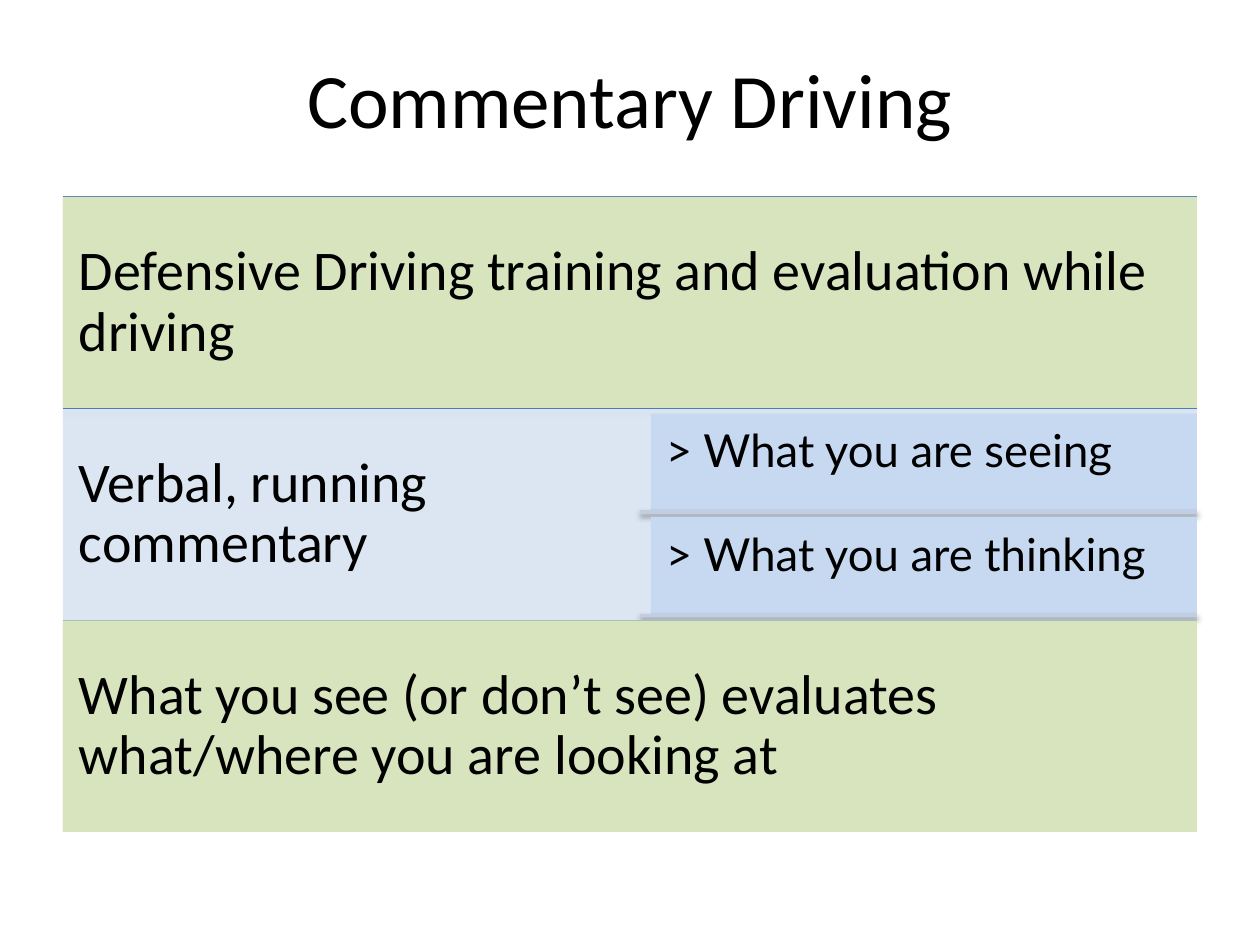
from lxml.etree import SubElement
from pptx import Presentation
from pptx.dml.color import RGBColor
from pptx.enum.shapes import MSO_CONNECTOR, MSO_SHAPE
from pptx.enum.text import MSO_ANCHOR, PP_ALIGN
from pptx.oxml.ns import qn
from pptx.util import Pt

PX = 914400 / 126
COLORS = {"panel": "DCE6F2", "green": "D7E4BD", "blue": "C6D9F1",
          "rule": "4B7EBC", "subrule": "C2CDE1", "text": "000000"}
ROWS = [
    ("Defensive Driving training and evaluation while driving", "green"),
    ("Verbal, running commentary", None),
    ("What you see (or don’t see) evaluates what/where you are looking at", "green"),
]
POINTS = ["> What you are seeing", "> What you are thinking"]


def emu(*lengths):
    return [round(n * PX) for n in lengths]


def color(name):
    return RGBColor.from_string(COLORS[name])


def style_text(p, font, size):
    f = p.runs[0].font
    f.name, f.size = font, Pt(size)
    f.color.rgb = color("text")


def add_block(s, box, fill, text="", font="Calibri", size=32,
              anchor=MSO_ANCHOR.MIDDLE, inset=16):
    sp = s.shapes.add_shape(MSO_SHAPE.RECTANGLE, *emu(*box))
    sp.shadow.inherit = False
    sp.line.fill.background()
    if fill:
        sp.fill.solid()
        sp.fill.fore_color.rgb = color(fill)
    else:
        sp.fill.background()
    if text:
        tf = sp.text_frame
        tf.word_wrap = True
        tf.vertical_anchor = anchor
        tf.margin_left, tf.margin_top, tf.margin_right, tf.margin_bottom = emu(*[inset] * 4)
        p = tf.paragraphs[0]
        p.text = text
        p.alignment = PP_ALIGN.LEFT
        p.line_spacing = 0.9
        style_text(p, font, size)


def add_rule(s, x1, x2, y, line, width, alpha):
    c = s.shapes.add_connector(MSO_CONNECTOR.STRAIGHT, *emu(x1, y, x2, y))
    c.line.color.rgb = color(line)
    c.line.width = Pt(width)
    # Soft shadow straight below the rule
    effects = SubElement(c._element.spPr, qn("a:effectLst"))
    shadow = SubElement(effects, qn("a:outerShdw"), blurRad=str(Pt(3.1)),
                        dist=str(Pt(1.7)), dir="5400000", rotWithShape="0")
    black = SubElement(shadow, qn("a:srgbClr"), val="000000")
    SubElement(black, qn("a:alpha"), val=str(alpha * 1000))


def add_title(s, box, text):
    sp = s.shapes.title
    sp.left, sp.top, sp.width, sp.height = emu(*box)
    tf = sp.text_frame
    tf.text = text
    tf.vertical_anchor = MSO_ANCHOR.MIDDLE
    tf.paragraphs[0].alignment = PP_ALIGN.CENTER
    style_text(tf.paragraphs[0], "Calibri", 44)


def add_points(s, box):
    x, y, w, h = box
    indent, gap = 11, 5
    point_h = (h - gap * (len(POINTS) + 1)) / len(POINTS)
    for i, text in enumerate(POINTS):
        top = y + gap + i * (point_h + gap)
        add_block(s, (x + indent, top, w - indent, point_h), "blue", text,
                  "Lato", 26, MSO_ANCHOR.TOP, 15)
        add_rule(s, x, x + w, top + point_h, "subrule", 2, 38)


def add_panel(s, box):
    x, y, w, h = box
    add_block(s, box, "panel")
    row_h = h / len(ROWS)
    split = 577
    for i, (text, fill) in enumerate(ROWS):
        top = y + i * row_h
        add_rule(s, x, x + w, top, "rule", 0.75, 35)
        add_block(s, (x, top, w if fill else split, row_h), fill, text)
        if not fill:
            add_points(s, (x + split, top, w - split, row_h))


def main():
    prs = Presentation()
    prs.slide_width, prs.slide_height = emu(1260, 945)
    s = prs.slides.add_slide(prs.slide_layouts[5])
    add_title(s, (63, 19, 1134, 157), "Commentary Driving")
    add_panel(s, (63, 197, 1134, 635))
    prs.save("out.pptx")


if __name__ == "__main__":
    main()
